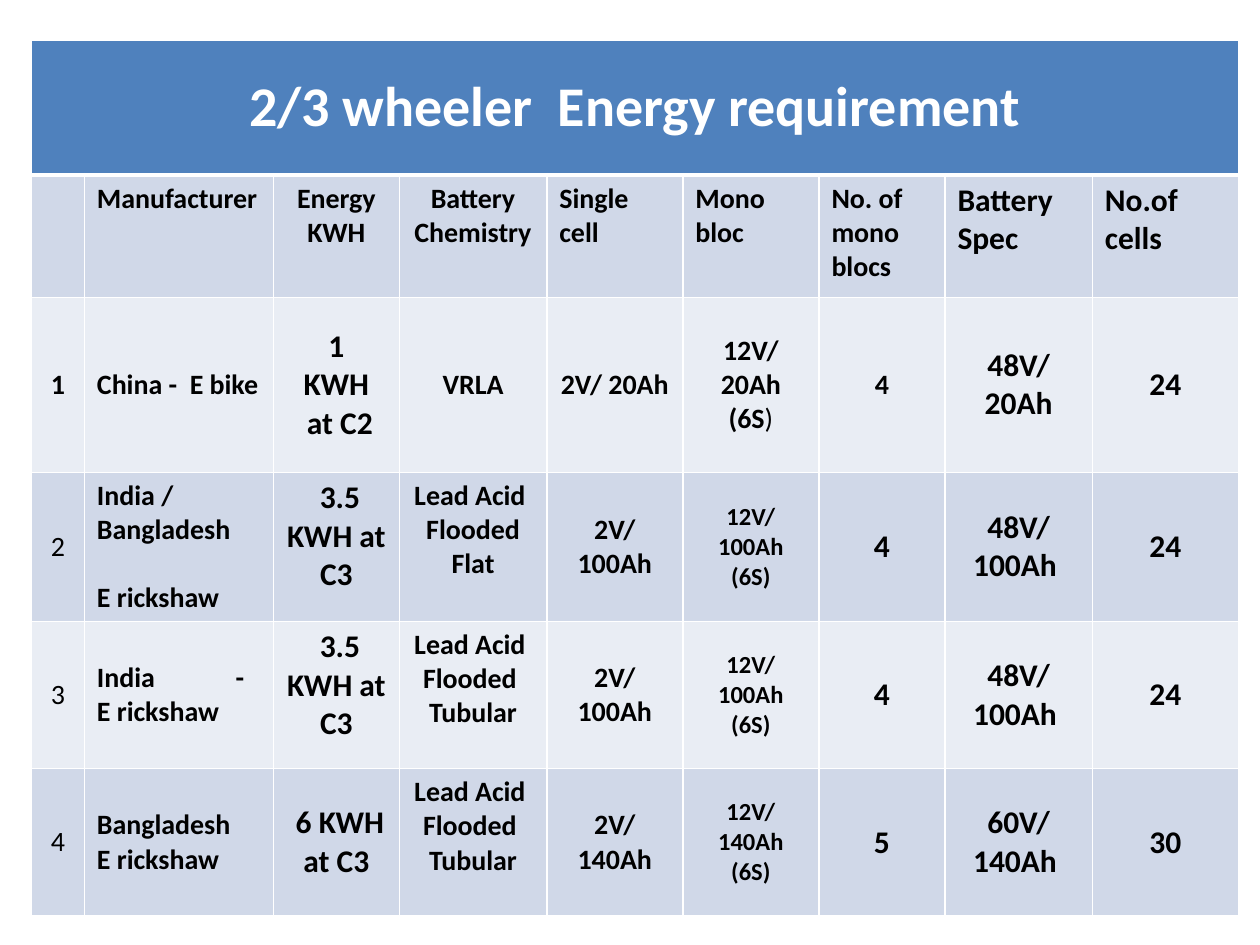
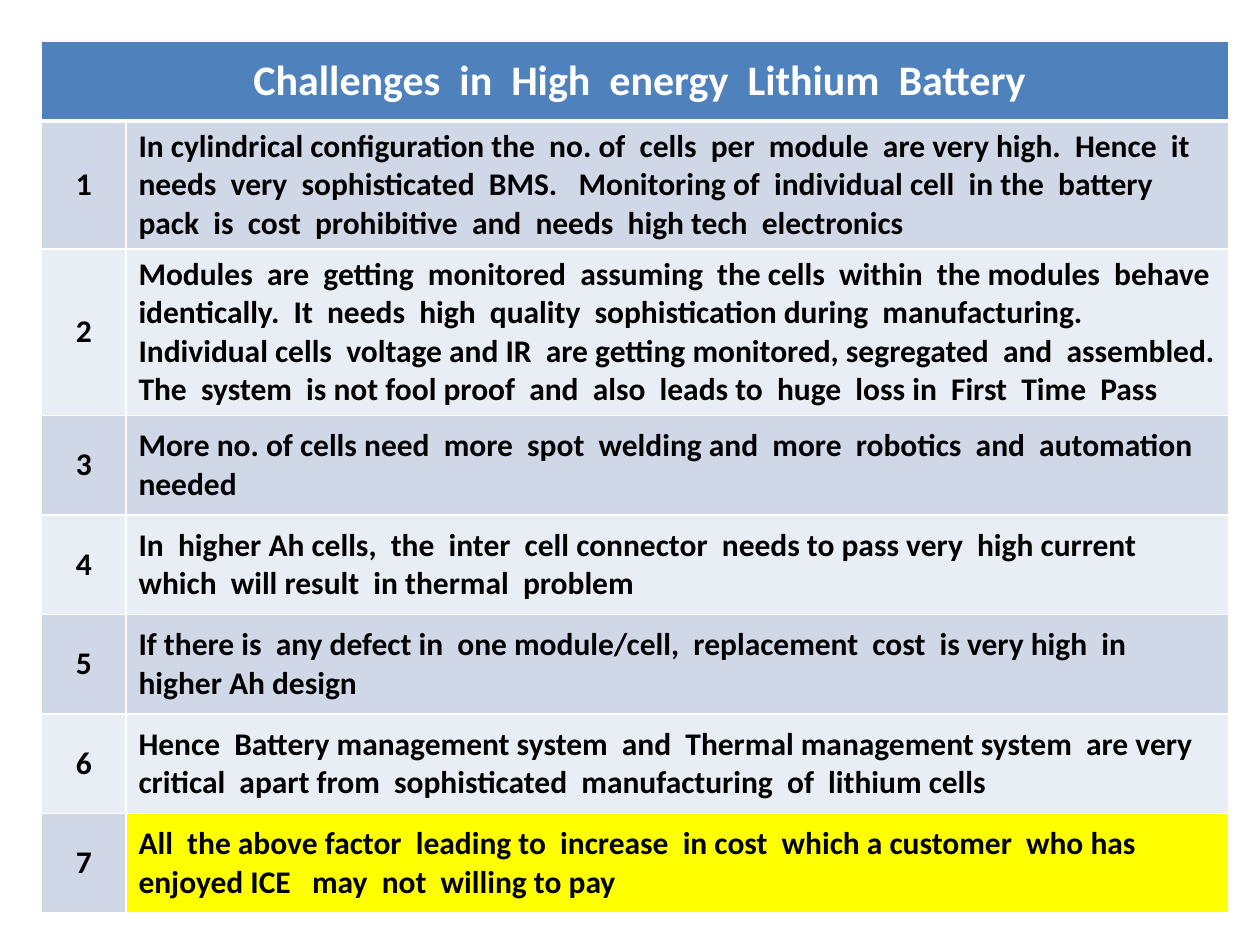
"""Build two battery slides, each a titled table with banded rows."""
import dataclasses

import pptx
import pptx.dml.color
import pptx.enum.text
import pptx.oxml
import pptx.oxml.ns
import pptx.util

Inches = pptx.util.Inches
Pt = pptx.util.Pt
RGBColor = pptx.dml.color.RGBColor
Align = pptx.enum.text.PP_ALIGN
Anchor = pptx.enum.text.MSO_ANCHOR


@dataclasses.dataclass(frozen=True)
class Theme:
    font: str = "Calibri"
    banner: str = "4F81BD"
    bands: tuple = ("D0D8E8", "E9EDF4")
    highlight: str = "FFFF00"
    light: str = "FFFFFF"
    dark: str = "000000"
    large_title: int = 32
    title: int = 24
    large: int = 18
    body: int = 16
    small: int = 14
    rule: int = 1
    banner_rule: int = 3


theme = Theme()


def write(cell, text, size=theme.large, bold=True, color=theme.dark,
          align=Align.CENTER, anchor=Anchor.MIDDLE):
    cell.vertical_anchor = anchor
    for index, line in enumerate(text.split("\n")):
        frame = cell.text_frame
        paragraph = frame.add_paragraph() if index else frame.paragraphs[0]
        paragraph.alignment = align
        run = paragraph.add_run()
        run.text = line
        run.font.name = theme.font
        run.font.size = Pt(size)
        run.font.bold = bold
        run.font.color.rgb = RGBColor.from_string(color)


def add_titled_table(left, top, widths, heights, title, title_size):
    slide = presentation.slides.add_slide(presentation.slide_layouts[6])
    table = slide.shapes.add_table(
        len(heights), len(widths), Inches(left), Inches(top),
        Inches(sum(widths)), Inches(sum(heights))).table
    table.first_row = table.horz_banding = False
    for column, width in zip(table.columns, widths):
        column.width = Inches(width)
    for number, (row, height) in enumerate(zip(table.rows, heights)):
        row.height = Inches(height)
        fill = theme.bands[(number - 1) % 2] if number else theme.banner
        for cell in row.cells:
            cell.fill.solid()
            cell.fill.fore_color.rgb = RGBColor.from_string(fill)
            properties = cell._tc.get_or_add_tcPr()
            for position, side in enumerate("LRTB"):
                beside_banner = (number, side) in ((0, "B"), (1, "T"))
                width = theme.banner_rule if beside_banner else theme.rule
                properties.insert(position, pptx.oxml.parse_xml(
                    f'<a:ln{side} {pptx.oxml.ns.nsdecls("a")} w="{Pt(width)}">'
                    f'<a:solidFill><a:srgbClr val="{theme.light}"/></a:solidFill>'
                    f'</a:ln{side}>'))
    table.cell(0, 0).merge(table.cell(0, len(widths) - 1))
    write(table.cell(0, 0), title, size=title_size, color=theme.light)
    return table


presentation = pptx.Presentation()
presentation.slide_width = Inches(10)
presentation.slide_height = Inches(7.5)

energy_table = add_titled_table(
    0.25, 0.32, [0.42, 1.5, 1, 1.17, 1.08, 1.08, 1, 1.17, 1.16],
    [1.07, 0.97, 1.39] + [1.17] * 3,
    " 2/3 wheeler  Energy requirement ", theme.large_title)

headers = ["Manufacturer", "Energy\nKWH", "Battery Chemistry", "Single cell",
           "Mono bloc", "No. of mono blocs", "Battery Spec", "No.of cells"]
for column, header in enumerate(headers, start=1):
    write(energy_table.cell(1, column), header, anchor=Anchor.TOP,
          size=theme.large if column >= 7 else theme.body,
          align=Align.CENTER if column in (2, 3) else Align.LEFT)

vehicles = [
    ["1", "China -  E bike", "1\nKWH\n at C2", "VRLA", "2V/ 20Ah",
     "12V/\n20Ah\n(6S", "4", "48V/\n20Ah", "24"],
    ["2", "India / Bangladesh\nE rickshaw", " 3.5 KWH at C3",
     "Lead Acid  Flooded Flat", "2V/ 100Ah",
     "12V/\n100Ah\n(6S)", "4", "48V/\n100Ah ", "24"],
    ["3", "India\t-\nE rickshaw", " 3.5 KWH at C3",
     "Lead Acid  Flooded  Tubular", "2V/ 100Ah",
     "12V/\n100Ah\n(6S)", "4", "48V/\n100Ah ", "24"],
    ["4", "Bangladesh\nE rickshaw", " 6 KWH at C3",
     "Lead Acid  Flooded  Tubular", "2V/ 140Ah",
     "12V/\n140Ah\n(6S)", "5", "60V/\n140Ah ", "30"],
]
first_sizes = [theme.body] * 2 + [theme.large] + [theme.body] * 4 + [theme.large] * 2
other_sizes = first_sizes[:5] + [theme.small] + [theme.large] * 3
top_cells = {(3, 2), (4, 2), (3, 3), (4, 3), (5, 3)}
for row, vehicle in enumerate(vehicles, start=2):
    sizes = first_sizes if row == 2 else other_sizes
    for column, (text, size) in enumerate(zip(vehicle, sizes)):
        write(energy_table.cell(row, column), text, size=size,
              bold=column > 0 or row == 2,
              align=Align.LEFT if column == 1 else Align.CENTER,
              anchor=Anchor.TOP if (row, column) in top_cells else Anchor.MIDDLE)

write_closing = energy_table.cell(2, 5).text_frame.paragraphs[-1].add_run()
write_closing.text = ")"
write_closing.font.name = theme.font
write_closing.font.size = Pt(theme.body)
write_closing.font.bold = False
write_closing.font.color.rgb = RGBColor.from_string(theme.dark)

energy_table.cell(3, 1).text_frame.paragraphs[1].space_before = Pt(theme.body * 1.2)
india = energy_table.cell(4, 1).text_frame.paragraphs[0]
india._p.get_or_add_pPr().append(pptx.oxml.parse_xml(
    f'<a:tabLst {pptx.oxml.ns.nsdecls("a")}>'
    f'<a:tab pos="{Inches(1.1)}" algn="l"/></a:tabLst>'))

challenges = [
    "In cylindrical configuration the  no. of  cells  per  module  are very high.  "
    "Hence  it needs  very  sophisticated  BMS.   Monitoring of  individual cell  "
    "in the  battery pack  is  cost  prohibitive  and  needs  high tech  electronics",
    "Modules  are  getting  monitored  assuming  the cells  within  the modules  "
    "behave identically.  It  needs  high  quality  sophistication during  "
    "manufacturing.  Individual cells  voltage and IR  are getting monitored, "
    "segregated  and  assembled. The  system  is not fool proof  and  also  "
    "leads to  huge  loss in  First  Time  Pass",
    "More no. of cells need  more  spot  welding and  more  robotics  and  "
    "automation needed",
    "In  higher Ah cells,  the  inter  cell connector  needs to pass very  "
    "high current  which  will result  in thermal  problem",
    "If there is  any defect in  one module/cell,  replacement  cost  is very "
    "high  in higher Ah design",
    "Hence  Battery management system  and  Thermal management system  are very "
    "critical  apart from  sophisticated  manufacturing  of  lithium cells",
    "All  the above factor  leading to  increase  in cost  which a customer  "
    "who has enjoyed ICE   may  not  willing to pay",
]
challenge_table = add_titled_table(
    0.33, 0.33, [0.67, 8.75], [0.63] + [0.79] * len(challenges),
    " Challenges  in  High  energy  Lithium  Battery", theme.title)
for row, challenge in enumerate(challenges, start=1):
    write(challenge_table.cell(row, 0), str(row))
    write(challenge_table.cell(row, 1), challenge, align=Align.LEFT)
conclusion = challenge_table.cell(len(challenges), 1)
conclusion.fill.fore_color.rgb = RGBColor.from_string(theme.highlight)

presentation.save("out.pptx")
